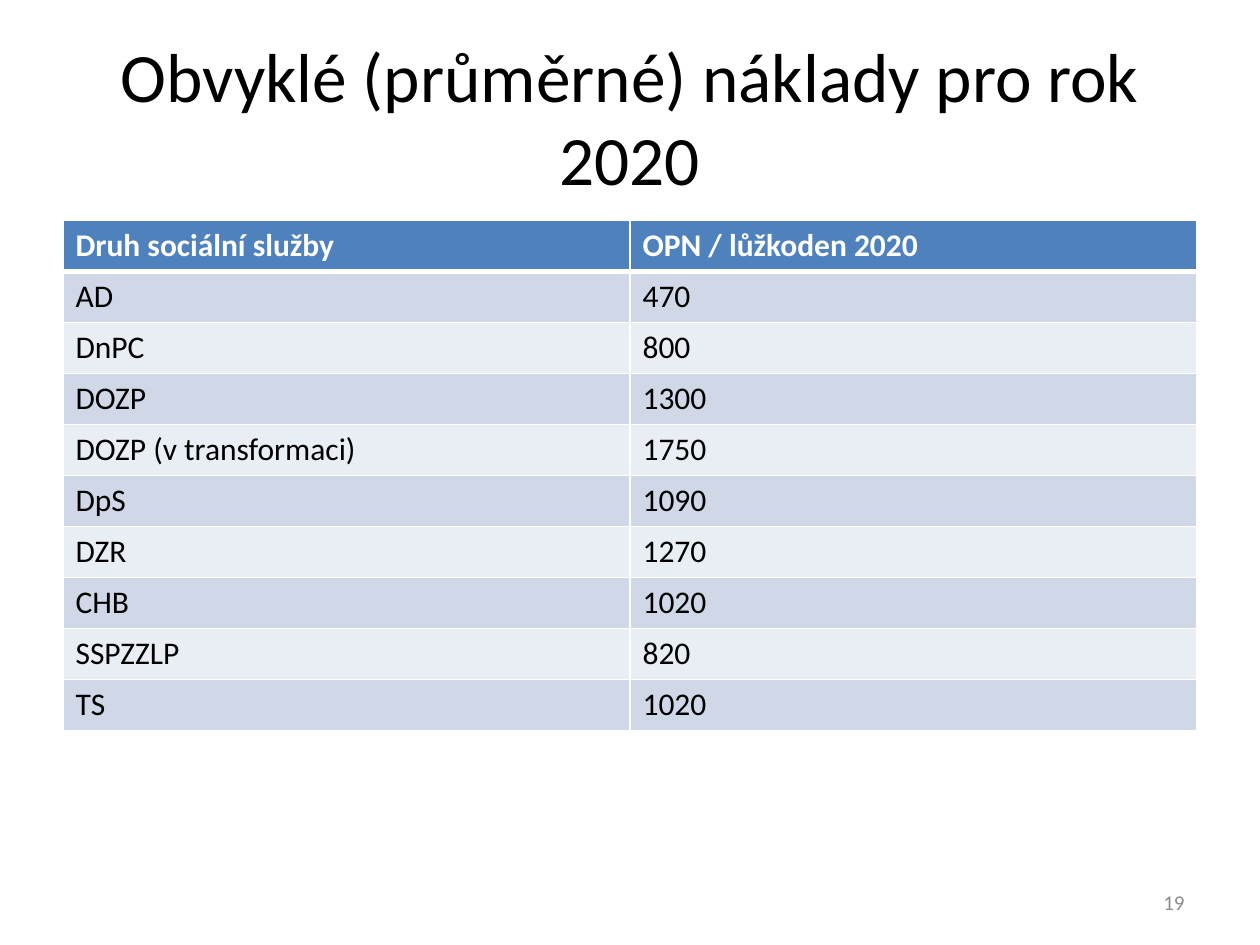
from lxml import etree
from pptx import Presentation
from pptx.dml.color import RGBColor
from pptx.enum.text import MSO_ANCHOR, PP_ALIGN
from pptx.oxml.ns import qn
from pptx.util import Inches, Pt

LEFT, CENTER, RIGHT = PP_ALIGN.LEFT, PP_ALIGN.CENTER, PP_ALIGN.RIGHT
MIDDLE = MSO_ANCHOR.MIDDLE

WIDTH, HEIGHT = Inches(10), Inches(7.5)
FONT = "Calibri"
COLORS = {
    "text": "000000",
    "white": "FFFFFF",
    "header": "4F81BD",
    "band_dark": "D0D8E8",
    "band_light": "E9EDF4",
    "number": "8C8C8C",
}
COSTS = [
    ("Druh sociální služby", "OPN / lůžkoden 2020"),
    ("AD", "470"),
    ("DnPC", "800"),
    ("DOZP", "1300"),
    ("DOZP (v transformaci)", "1750"),
    ("DpS", "1090"),
    ("DZR", "1270"),
    ("CHB", "1020"),
    ("SSPZZLP", "820"),
    ("TS", "1020"),
]


def share(x, y, w, h):
    """Turn shares of the slide's size into a box in EMU."""
    return int(x * WIDTH), int(y * HEIGHT), int(w * WIDTH), int(h * HEIGHT)


def rgb(name):
    return RGBColor.from_string(COLORS[name])


def write(tf, text, size=18, color="text", bold=False, align=LEFT):
    p = tf.paragraphs[0]
    p.alignment = align
    r = p.add_run()
    r.text = text
    r.font.name = FONT
    r.font.size = Pt(size)
    r.font.bold = bold
    r.font.color.rgb = rgb(color)


def add_text(s, box, text, **fmt):
    tf = s.shapes.add_textbox(*box).text_frame
    tf.word_wrap = True
    tf.vertical_anchor = MIDDLE
    write(tf, text, **fmt)


def set_borders(cell, **widths):
    """Draw white cell borders, with widths in points by side."""
    tcPr = cell._tc.get_or_add_tcPr()
    for side in "LRTB":
        ln = etree.SubElement(tcPr, qn(f"a:ln{side}"), w=str(Pt(widths.get(side, 1))))
        fill = etree.SubElement(ln, qn("a:solidFill"))
        etree.SubElement(fill, qn("a:srgbClr"), val=COLORS["white"])


def add_cost_table(s, box, rows):
    """Add a banded table with equal columns and rows."""
    n_rows, n_cols = len(rows), len(rows[0])
    table = s.shapes.add_table(n_rows, n_cols, *box).table
    for col in table.columns:
        col.width = box[2] // n_cols
    for i, values in enumerate(rows):
        table.rows[i].height = box[3] // n_rows
        header = i == 0
        band = "header" if header else "band_dark" if i % 2 else "band_light"
        for j, value in enumerate(values):
            cell = table.cell(i, j)
            set_borders(cell, T=3 if i == 1 else 1, B=3 if header else 1)
            cell.fill.solid()
            cell.fill.fore_color.rgb = rgb(band)
            write(cell.text_frame, value, bold=header,
                  color="white" if header else "text")


def main():
    prs = Presentation()
    prs.slide_width, prs.slide_height = WIDTH, HEIGHT
    s = prs.slides.add_slide(prs.slide_layouts[6])
    add_text(s, share(0.05, 0.04, 0.9, 1 / 6),
             "Obvyklé (průměrné) náklady pro rok 2020", size=39.6, align=CENTER)
    add_cost_table(s, share(0.05, 0.7 / 3, 0.9, 0.54), COSTS)
    add_text(s, share(0.72, 0.93, 0.23, 0.05), "19",
             size=12, color="number", align=RIGHT)
    prs.save("out.pptx")


if __name__ == "__main__":
    main()
